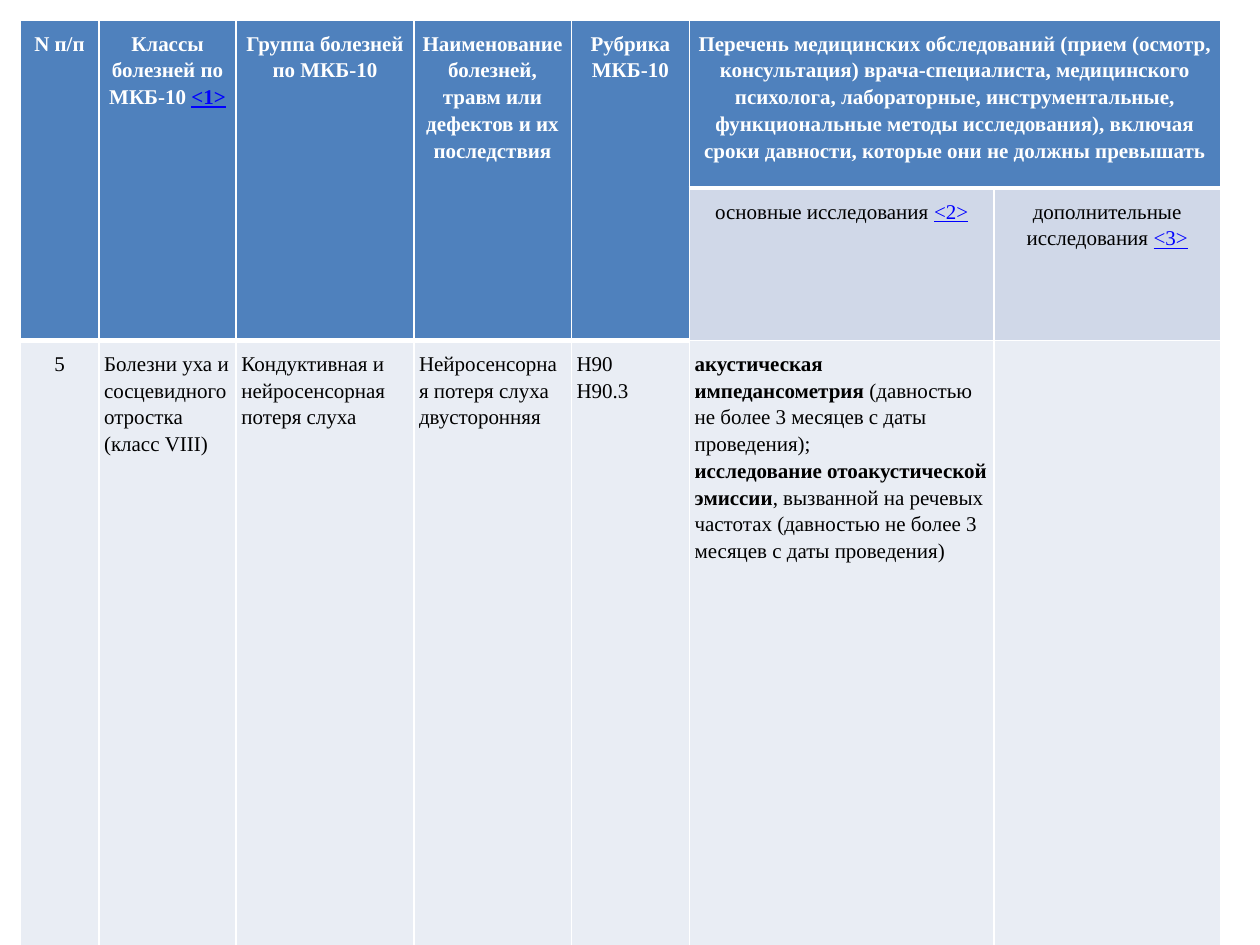
from lxml.etree import SubElement
from pptx import Presentation
from pptx.dml.color import RGBColor
from pptx.enum.text import PP_ALIGN
from pptx.oxml.ns import qn
from pptx.util import Pt

HUES = {"head": "4F81BD", "sub": "D0D8E8", "body": "E9EDF4",
        "white": "FFFFFF", "black": "000000", "link": "0000FF"}
FONT, SIZE = "Times New Roman", 12
COLS = [45, 78.5, 101.5, 90, 67.5, 174, 129.5]
ROWS = [96, 87, 346]

# A cell is a list of paragraphs; a paragraph is a list of (text, style).
HEAD = [
    [[("N п/п", "")]],
    [[("Классы болезней по МКБ-10 ", ""), ("<1>", "link")]],
    [[("Группа болезней по МКБ-10", "")]],
    [[("Наименование болезней, травм или дефектов и их последствия", "")]],
    [[("Рубрика МКБ-10", "")]],
    [[("Перечень медицинских обследований (прием (осмотр, консультация) "
       "врача-специалиста, медицинского психолога, лабораторные, "
       "инструментальные, функциональные методы исследования), включая "
       "сроки давности, которые они не должны превышать", "")]],
]
SUB = [
    [[("основные исследования ", ""), ("<2>", "link")]],
    [[("дополнительные исследования ", ""), ("<3>", "link")]],
]
BODY = [
    [[("5", "")]],
    [[("Болезни уха и сосцевидного отростка (класс VIII)", "")]],
    [[("Кондуктивная и нейросенсорная потеря слуха", "")]],
    [[("Нейросенсорная потеря слуха двусторонняя", "")]],
    [[("H90", "")], [("H90.3", "")]],
    [[("акустическая импедансометрия", "bold"),
      (" (давностью не более 3 месяцев с даты проведения);", "")],
     [("исследование отоакустической эмиссии", "bold"),
      (", вызванной на речевых частотах (давностью не более 3 месяцев "
       "с даты проведения)", "")]],
    [],
]


def hue(name):
    return RGBColor.from_string(HUES[name])


def edge(cell, base):
    """Draw white borders, with the given width in points at the base."""
    props = cell._tc.get_or_add_tcPr()
    for i, (side, width) in enumerate(zip("LRTB", (1, 1, 1, base))):
        line = SubElement(props, qn("a:ln" + side), w=str(Pt(width)))
        fill = SubElement(line, qn("a:solidFill"))
        SubElement(fill, qn("a:srgbClr"), val=HUES["white"])
        props.insert(i, line)


def write(cell, paras, ink, bold, align):
    frame = cell.text_frame
    for i, parts in enumerate(paras):
        para = frame.add_paragraph() if i else frame.paragraphs[0]
        para.alignment = align
        para.line_spacing = 1.15
        for text, style in parts:
            run = para.add_run()
            run.text = text
            font = run.font
            font.name, font.size = FONT, Pt(SIZE)
            font.bold = bold or style == "bold"
            font.underline = style == "link"
            font.color.rgb = hue("link" if style == "link" else ink)


def style(cell, fill, base):
    cell.fill.solid()
    cell.fill.fore_color.rgb = hue(fill)
    cell.margin_left = cell.margin_right = Pt(3)
    cell.margin_top = cell.margin_bottom = Pt(5)
    edge(cell, base)


def draw_table(slide, left, top):
    grid = slide.shapes.add_table(len(ROWS), len(COLS), Pt(left), Pt(top),
                                  Pt(sum(COLS)), Pt(sum(ROWS))).table
    for col, width in zip(grid.columns, COLS):
        col.width = Pt(width)
    for row, height in zip(grid.rows, ROWS):
        row.height = Pt(height)

    last = len(HEAD) - 1
    for r in range(len(ROWS)):
        for c in range(len(COLS)):
            fill = "body" if r == 2 else "sub" if r and c >= last else "head"
            style(grid.cell(r, c), fill, 1 if r else 3)
    for c in range(last):
        grid.cell(0, c).merge(grid.cell(1, c))
    grid.cell(0, last).merge(grid.cell(0, last + 1))

    for c, paras in enumerate(HEAD):
        write(grid.cell(0, c), paras, "white", True, PP_ALIGN.CENTER)
    for c, paras in enumerate(SUB, last):
        write(grid.cell(1, c), paras, "black", False, PP_ALIGN.CENTER)
    for c, paras in enumerate(BODY):
        align = PP_ALIGN.LEFT if c else PP_ALIGN.CENTER
        write(grid.cell(2, c), paras, "black", False, align)


def main():
    deck = Presentation()
    deck.slide_width, deck.slide_height = Pt(720), Pt(540)
    slide = deck.slides.add_slide(deck.slide_layouts[6])
    draw_table(slide, 11.5, 11.5)
    deck.save("out.pptx")


if __name__ == "__main__":
    main()
